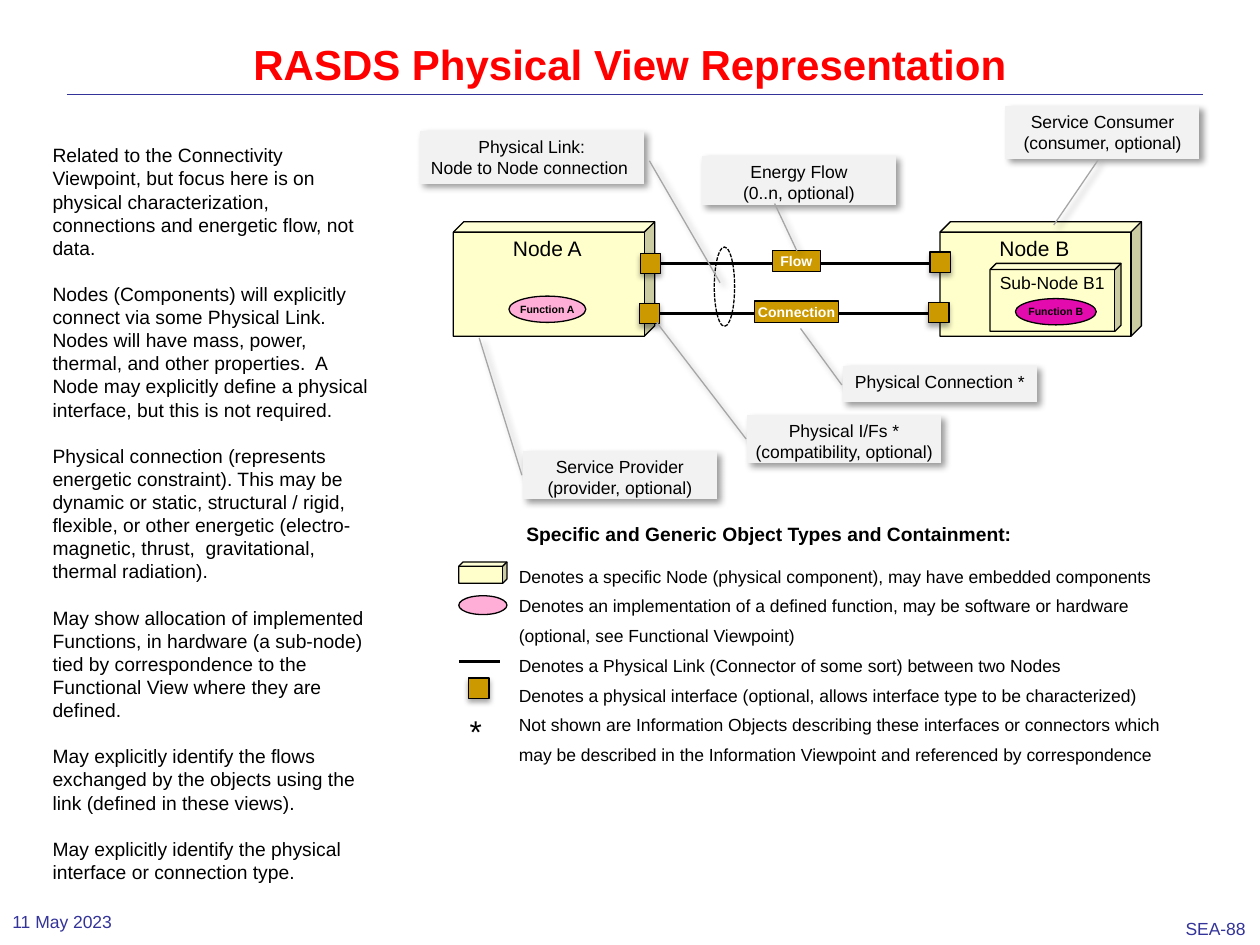
from lxml.etree import SubElement
from pptx import Presentation
from pptx.dml.color import RGBColor
from pptx.enum.dml import MSO_LINE
from pptx.enum.shapes import MSO_CONNECTOR, MSO_SHAPE as Kind
from pptx.enum.text import MSO_ANCHOR as Anchor, PP_ALIGN as Align
from pptx.oxml.ns import qn
from pptx.util import Cm, Pt

BLACK = RGBColor(0x00, 0x00, 0x00)
WHITE = RGBColor(0xFF, 0xFF, 0xFF)
RED = RGBColor(0xFF, 0x00, 0x00)
NAVY = RGBColor(0x33, 0x33, 0x99)
CREAM = RGBColor(0xFF, 0xFF, 0xCC)
GOLD = RGBColor(0xCC, 0x99, 0x00)
PINK = RGBColor(0xFF, 0xAE, 0xD7)
MAGENTA = RGBColor(0xE3, 0x0B, 0xAD)
PALE = RGBColor(0xF2, 0xF2, 0xF2)
GREY = RGBColor(0xA6, 0xA6, 0xA6)

PORT_SHADOW = (35, 3.1, 1.8, 90)
CALLOUT_SHADOW = (40, 4, 3, 45)

deck = Presentation()
deck.slide_width, deck.slide_height = Cm(25.4), Cm(19.05)
page = deck.slides.add_slide(deck.slide_layouts[5])


def add_outline(kind, place, fill, line=BLACK, shadow=None):
    shape = page.shapes.add_shape(kind, *map(Cm, place))
    shape.shadow.inherit = False
    if fill is None:
        shape.fill.background()
    else:
        shape.fill.solid()
        shape.fill.fore_color.rgb = fill
    shape.line.color.rgb = line
    shape.line.width = Pt(0.75)
    if shadow:
        opacity, blur, distance, angle = shadow
        effects = shape._element.spPr.find(qn("a:effectLst"))
        outer = SubElement(effects, qn("a:outerShdw"), blurRad=str(Pt(blur)),
                           dist=str(Pt(distance)), dir=str(angle * 60000), rotWithShape="0")
        color = SubElement(outer, qn("a:srgbClr"), val=str(BLACK))
        SubElement(color, qn("a:alpha"), val=str(opacity * 1000))
    return shape


def write(box, lines, size, color=BLACK, bold=False, align=Align.LEFT,
          anchor=Anchor.TOP, wrap=True, inset=None):
    frame = box.text_frame
    frame.word_wrap = wrap
    frame.vertical_anchor = anchor
    if inset is not None:
        frame.margin_left = frame.margin_right = Cm(inset)
        frame.margin_top = frame.margin_bottom = Cm(inset)
    for index, line in enumerate(lines):
        para = frame.paragraphs[0] if index == 0 else frame.add_paragraph()
        para.text = line
        para.alignment = align
        para.font.name = "Arial"
        para.font.size = Pt(size)
        para.font.bold = bold
        para.font.color.rgb = color
    return frame.paragraphs


title = page.shapes.title
title.left, title.top, title.width, title.height = map(Cm, (1.27, 0.76, 22.86, 3.18))
write(title, ["RASDS Physical View Representation"], 24, RED, True, Align.CENTER)[0].line_spacing = 0.9

for kind, place, adjustment in [
    (Kind.CUBE, (9.14, 4.47, 4.06, 2.31), 0.091),
    (Kind.CUBE, (18.95, 4.47, 4.06, 2.31), 0.091),
    (Kind.CUBE, (19.96, 5.31, 2.64, 1.37), 0.091),
    (Kind.CUBE, (9.25, 11.33, 0.97, 0.43), 0.199),
]:
    add_outline(kind, place, CREAM).adjustments[0] = adjustment

for left, right, top, color, width in [
    (1.35, 24.26, 1.9, NAVY, 0.13),
    (13.21, 18.9, 5.31, BLACK, 1.5),
    (13.18, 18.87, 6.32, BLACK, 1.5),
    (9.25, 10.08, 13.34, BLACK, 1.5),
]:
    link = page.shapes.add_connector(MSO_CONNECTOR.STRAIGHT, Cm(left), Cm(top), Cm(right), Cm(top))
    link.line.color.rgb = color
    link.line.width = Pt(width)
    SubElement(link._element.spPr, qn("a:effectLst"))

for left, top in [(12.91, 5.11), (18.75, 5.08), (12.89, 6.12), (18.72, 6.1), (9.45, 13.67)]:
    add_outline(Kind.RECTANGLE, (left, top, 0.41, 0.41), GOLD, shadow=PORT_SHADOW)

for label, place in [("Flow", (15.57, 5.05, 0.97, 0.43)), ("Connection", (15.21, 6.07, 1.7, 0.43))]:
    tag = add_outline(Kind.RECTANGLE, place, GOLD)
    write(tag, [label], 8, WHITE, True, Align.CENTER, inset=0.05)

for label, place, fill in [
    ("Function A", (10.26, 5.97, 1.55, 0.53), PINK),
    ("Function B", (20.47, 6.02, 1.63, 0.53), MAGENTA),
]:
    function = add_outline(Kind.OVAL, place, fill)
    write(function, [label], 6, bold=True, align=Align.CENTER, anchor=Anchor.MIDDLE, wrap=False)

add_outline(Kind.OVAL, (9.25, 12.01, 0.97, 0.38), PINK)
link_ring = add_outline(Kind.OVAL, (14.4, 4.98, 0.41, 1.6), None)
link_ring.line.dash_style = MSO_LINE.SQUARE_DOT

for lines, place, pointer in [
    (["Physical Link:\vNode to Node connection "], (8.46, 2.64, 4.52, 1.07), (0.563, 1.025, 2.86, 1.34)),
    (["Service Provider", "(provider, optional)"], (10.54, 9.09, 3.91, 0.97), (0.506, -0.005, -2.348, -0.225)),
    (["Service Consumer", "(consumer, optional)"], (20.27, 2.13, 3.91, 1.07), (1.024, 0.478, 2.251, 0.249)),
    (["Physical Connection *"], (16.99, 7.37, 3.91, 0.74), (0.529, -0.005, -1.012, -0.218)),
    (["Energy Flow", "(0..n, optional)"], (14.15, 3.15, 3.91, 0.99), (0.963, 0.375, 1.928, 0.49)),
    (["Physical I/Fs *", "(compatibility, optional)"], (15.06, 8.36, 3.91, 0.97), (0.506, -0.005, -1.922, -0.467)),
]:
    callout = add_outline(Kind.LINE_CALLOUT_1_NO_BORDER, place, PALE, GREY, CALLOUT_SHADOW)
    for index, value in enumerate(pointer):
        callout.adjustments[index] = value
    write(callout, lines, 10, align=Align.CENTER, inset=0.1)

for label, place, size, color, bold, align, anchor in [
    ("Node A", (10.08, 4.62, 1.91, 0.76), 12, BLACK, False, Align.CENTER, Anchor.TOP),
    ("Node B", (19.89, 4.62, 1.93, 0.76), 12, BLACK, False, Align.CENTER, Anchor.TOP),
    ("Sub-Node B1", (19.89, 5.36, 2.64, 0.69), 10, BLACK, False, Align.CENTER, Anchor.TOP),
    ("Specific and Generic Object Types and Containment:", (10.36, 10.41, 10.39, 0.74),
     11, BLACK, True, Align.LEFT, Anchor.TOP),
    ("*", (9.22, 14.22, 0.76, 1.02), 18, BLACK, False, Align.LEFT, Anchor.TOP),
    ("11 May 2023", (0, 18.21, 4.8, 0.74), 10, NAVY, False, Align.LEFT, Anchor.MIDDLE),
    ("SEA-88", (23.65, 18.39, 1.73, 0.66), 10, NAVY, False, Align.LEFT, Anchor.TOP),
]:
    box = page.shapes.add_textbox(*map(Cm, place))
    write(box, [label], size, color, bold, align, anchor, wrap=False)

legend = page.shapes.add_textbox(Cm(10.21), Cm(11.1), Cm(14.12), Cm(4.42))
for para in write(legend, [
    "Denotes a specific Node (physical component), may have embedded components",
    "Denotes an implementation of a defined function, may be software or hardware "
    "(optional, see Functional Viewpoint)",
    "Denotes a Physical Link (Connector of some sort) between two Nodes",
    "Denotes a physical interface (optional, allows interface type to be characterized)",
    "Not shown are Information Objects describing these interfaces or connectors which "
    "may be described in the Information Viewpoint and referenced by correspondence",
], 10):
    para.line_spacing = Pt(17)

description = page.shapes.add_textbox(Cm(0.81), Cm(2.77), Cm(7.04), Cm(15.29))
for para in write(description, [
    "Related to the Connectivity Viewpoint, but focus here is on physical characterization, "
    "connections and energetic flow, not data.",
    "Nodes (Components) will explicitly connect via some Physical Link. Nodes will have mass, "
    "power, thermal, and other properties.  A Node may explicitly define a physical interface, "
    "but this is not required.",
    "Physical connection (represents energetic constraint). This may be dynamic or static, "
    "structural / rigid, flexible, or other energetic (electro-magnetic, thrust,  gravitational, "
    "thermal radiation).",
    "May show allocation of implemented Functions, in hardware (a sub-node) tied by "
    "correspondence to the Functional View where they are defined.",
    "May explicitly identify the flows exchanged by the objects using the link "
    "(defined in these views).",
    "May explicitly identify the physical interface or connection type.",
], 11)[1:]:
    para.space_before = Pt(13.2)

deck.save("out.pptx")
